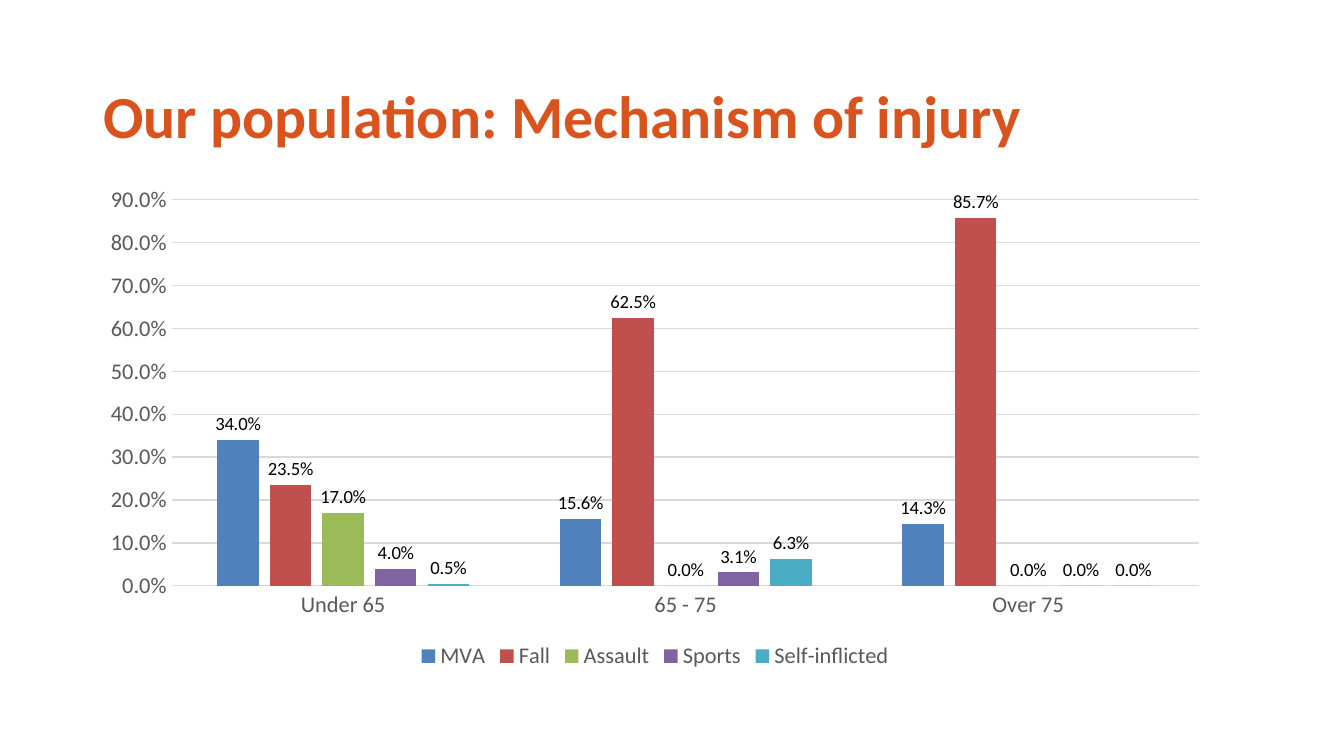
from pptx import Presentation
from pptx.chart.data import CategoryChartData
from pptx.dml.color import RGBColor
from pptx.enum.chart import XL_CHART_TYPE as CT, XL_LABEL_POSITION as LabelPos
from pptx.enum.chart import XL_LEGEND_POSITION as LegendPos, XL_TICK_MARK as Tick
from pptx.enum.text import MSO_ANCHOR as Anchor, PP_ALIGN as Align
from pptx.util import Pt

PX = 9525
FONT = "Calibri"
PERCENT = "0.0%"
COLORS = {
    "title": "D9531E",
    "label": "000000",
    "axis": "595959",
    "grid": "D9D9D9",
    "MVA": "4F81BD",
    "Fall": "C0504D",
    "Assault": "9BBB59",
    "Sports": "8064A2",
    "Self-inflicted": "4BACC6",
}
AGE_GROUPS = ["Under 65", "65 - 75", "Over 75"]
MECHANISMS = {
    "MVA": (0.34, 0.156, 0.143),
    "Fall": (0.235, 0.625, 0.857),
    "Assault": (0.17, 0, 0),
    "Sports": (0.04, 0.031, 0),
    "Self-inflicted": (0.005, 0.063, 0),
}


def px(*lengths):
    return [n * PX for n in lengths]


def color(name):
    return RGBColor.from_string(COLORS[name])


def format_font(font, size, name, bold=False):
    font.name = FONT
    font.size = Pt(size)
    font.bold = bold
    font.color.rgb = color(name)


def write(tf, text, size=12, name="label", bold=False, align=Align.LEFT, anchor=Anchor.MIDDLE):
    tf.word_wrap = True
    tf.vertical_anchor = anchor
    p = tf.paragraphs[0]
    p.alignment = align
    r = p.add_run()
    r.text = text
    format_font(r.font, size, name, bold)


def format_line(line):
    line.color.rgb = color("grid")
    line.width = Pt(0.75)


def place_title(s, box, text):
    sp = s.shapes.title
    sp.left, sp.top, sp.width, sp.height = px(*box)
    write(sp.text_frame, text, size=32, name="title", bold=True)


def format_axes(chart):
    for axis in (chart.category_axis, chart.value_axis):
        axis.major_tick_mark = axis.minor_tick_mark = Tick.NONE
        format_font(axis.tick_labels.font, 12, "axis")
    format_line(chart.category_axis.format.line)
    values = chart.value_axis
    values.minimum_scale, values.maximum_scale, values.major_unit = 0, 0.9, 0.1
    values.format.line.fill.background()
    format_line(values.major_gridlines.format.line)
    values.tick_labels.number_format = PERCENT
    values.tick_labels.number_format_is_linked = False


def format_series(series):
    series.invert_if_negative = False
    series.format.fill.solid()
    series.format.fill.fore_color.rgb = color(series.name)
    labels = series.data_labels
    labels.show_value = True
    labels.number_format = PERCENT
    labels.number_format_is_linked = False
    labels.position = LabelPos.OUTSIDE_END
    format_font(labels.font, 10, "label")


def place_chart(s, box):
    data = CategoryChartData(number_format=PERCENT)
    data.categories = AGE_GROUPS
    for name, shares in MECHANISMS.items():
        data.add_series(name, shares)
    chart = s.shapes.add_chart(CT.COLUMN_CLUSTERED, *px(*box), data).chart
    format_font(chart.font, 10, "label")
    chart.has_title = False
    chart.has_legend = True
    chart.legend.position = LegendPos.BOTTOM
    chart.legend.include_in_layout = False
    format_font(chart.legend.font, 12, "axis")
    format_axes(chart)
    plot = chart.plots[0]
    plot.gap_width, plot.overlap = 219, -27
    plot.vary_by_categories = False
    for series in plot.series:
        format_series(series)


def main():
    prs = Presentation()
    prs.slide_width, prs.slide_height = px(960, 540)
    s = prs.slides.add_slide(prs.slide_layouts[5])
    place_title(s, (64, 45, 710, 74), "Our population: Mechanism of injury")
    place_chart(s, (63, 126, 810, 356))
    prs.save("out.pptx")


if __name__ == "__main__":
    main()
